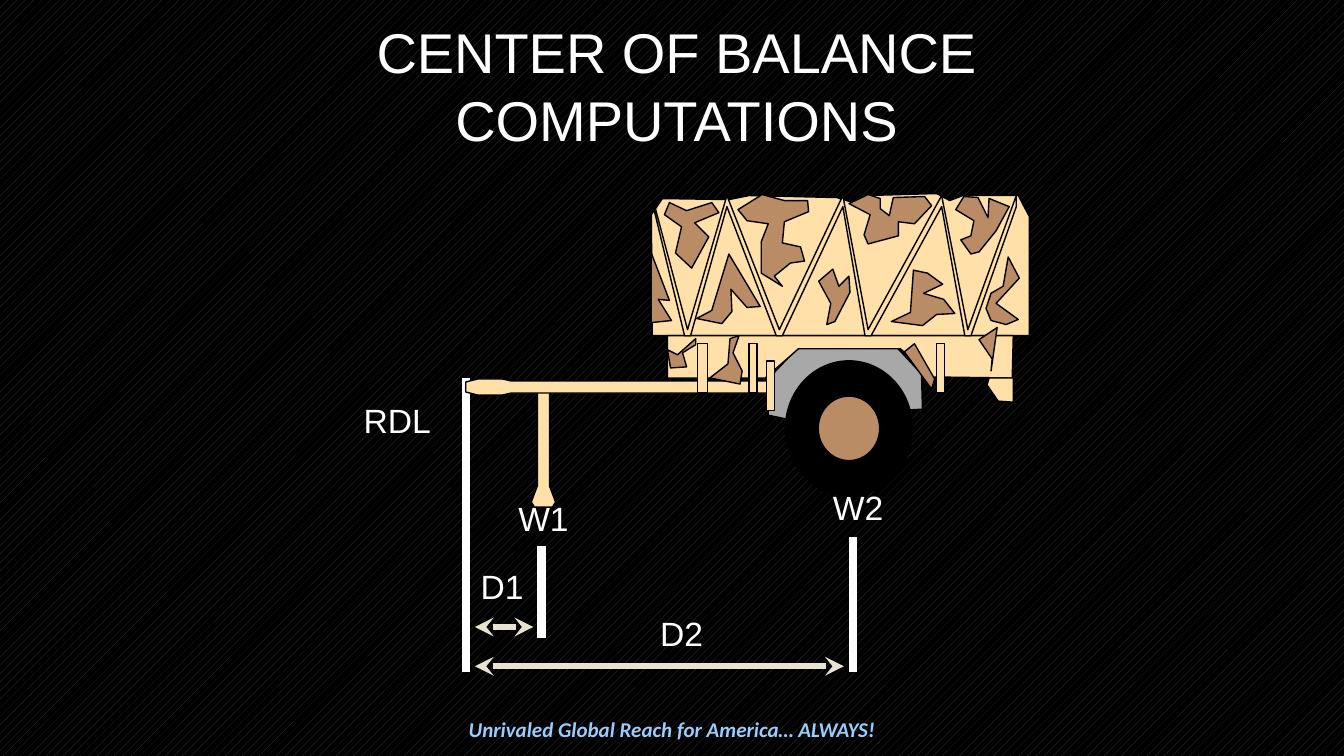
"""Build the slide on center of balance computations for a trailer."""
from lxml.etree import SubElement
from pptx import Presentation
from pptx.dml.color import RGBColor
from pptx.enum.dml import MSO_PATTERN
from pptx.enum.shapes import MSO_CONNECTOR, MSO_SHAPE
from pptx.enum.text import MSO_ANCHOR, PP_ALIGN
from pptx.oxml.ns import qn
from pptx.util import Inches, Pt

COLORS = {"white": "FFFFFF", "black": "000000", "hatch": "404040", "arrow": "E8E3CE",
          "sand": "FFE0A8", "brown": "BA8C66", "gray": "A8A8A8", "motto": "99CCFF"}

TITLE = "CENTER OF BALANCE COMPUTATIONS"
MOTTO = "Unrivaled Global Reach for America… ALWAYS!"

MARKS = [(4.62, 3.75, 6.67), (5.37, 5.42, 6.33), (8.46, 5.33, 6.67)]
SPANS = [(4.71, 8.37, 6.61), (4.71, 5.29, 6.22)]
LABELS = [("RDL", 3.94, 3.92), ("D2", 6.76, 6.03), ("D1", 4.98, 5.56),
          ("W1", 5.39, 4.89), ("W2", 8.51, 4.78)]

FENDER = [(7.62, 4.12), (7.62, 3.76), (7.94, 3.42), (8.87, 3.42), (9.14, 3.71),
          (9.15, 4.06), (8.96, 4.07), (8.5, 3.7), (7.91, 4.18)]
COVER = [(6.47, 3.33), (6.46, 2.13), (6.57, 1.97), (7.23, 1.98), (7.43, 1.94), (8.3, 1.96),
         (8.43, 2), (8.6, 1.94), (9.29, 1.92), (9.42, 1.99), (9.55, 1.94), (10.1, 1.94),
         (10.21, 2.15), (10.21, 3.33)]
BED = [(6.62, 3.75), (6.62, 3.33), (10.05, 3.33), (10.04, 3.75), (9.26, 3.74),
       (8.93, 3.46), (7.92, 3.46), (7.59, 3.75)]
FLAP = [(10.05, 3.75), (10.05, 3.99), (9.9, 3.98), (9.79, 3.82), (9.81, 3.75)]
BAR_AXIS, BAR_HALF = 3.84, [(4.62, 0.05), (4.74, 0.08), (4.98, 0.08), (5.07, 0.06), (7.62, 0.06)]
LEG_AXIS, LEG_HALF = 5.39, [(3.84, 0.06), (4.82, 0.06), (4.98, 0.12), (5.03, 0.09)]
ROPE_TOPS, ROPE_LOWS = [6.48, 7.21, 8.36, 9.34, 10.08], [6.82, 7.73, 8.61, 9.6]
HUB, WHEEL, CAP = (8.42, 4.25), (1.26, 1.34), (0.61, 0.64)
POSTS = [(6.92, 3.41, 0.1), (7.43, 3.41, 0.08), (7.6, 3.58, 0.08), (9.29, 3.41, 0.08)]

HIGH_SPOTS = [
    [(8.2, 3.22), (8.24, 3.01), (8.12, 2.79), (8.26, 2.67), (8.32, 2.84), (8.42, 2.74),
     (8.43, 2.9), (8.28, 3.19)],
    [(6.91, 3.16), (7.06, 3.08), (7.23, 2.52), (7.54, 3.04), (7.41, 3.05), (7.25, 2.87),
     (7.26, 3.09), (7.16, 3.21)],
    [(8.42, 2.02), (8.63, 2.13), (8.57, 2.33), (8.61, 2.42), (8.91, 2.34), (8.91, 2.2),
     (9.07, 2.22), (9.24, 2.04), (9.17, 1.95), (8.86, 1.96), (8.82, 2.14), (8.73, 2.07),
     (8.73, 1.97), (8.61, 1.93)],
    [(6.64, 2.01), (6.59, 2.13), (6.76, 2.25), (6.7, 2.51), (6.86, 2.66), (7.03, 2.35),
     (6.89, 2.21), (7.13, 2.11), (7.06, 2.01), (6.81, 2.09)],
    [(8.84, 3.19), (9.03, 3.1), (9.06, 2.68), (9.2, 2.71), (9.35, 2.82), (9.16, 2.91),
     (9.36, 2.97), (9.47, 3.11), (9.29, 3.12), (9.15, 3.23)],
    [(6.46, 2.51), (6.64, 2.98), (6.53, 2.97), (6.66, 3.18), (6.46, 3.2)],
    [(7.32, 2.08), (7.56, 1.93), (7.78, 1.99), (8.01, 1.99), (8.02, 2.1), (7.78, 2.2),
     (7.76, 2.41), (7.94, 2.45), (7.98, 2.59), (7.84, 2.61), (7.68, 2.74), (7.76, 2.84),
     (7.55, 2.71), (7.55, 2.4), (7.62, 2.22), (7.41, 2.19)],
    [(9.56, 1.95), (9.48, 2.08), (9.66, 2.19), (9.63, 2.34), (9.53, 2.38), (9.63, 2.52),
     (9.71, 2.5), (9.88, 2.29), (10.01, 2.05), (9.81, 1.97), (9.8, 2.16), (9.7, 1.96)],
    [(9.78, 3.06), (9.83, 2.91), (9.95, 2.84), (10, 2.55), (10.11, 2.76), (9.88, 3.01),
     (10.1, 3.17), (9.98, 3.22), (9.83, 3.18)]]
LOW_SPOTS = [
    [(6.9, 3.36), (6.72, 3.52), (6.62, 3.47), (6.65, 3.65), (6.81, 3.64), (6.77, 3.5),
     (6.9, 3.42)],
    [(7.04, 3.75), (7.22, 3.61), (7.24, 3.36), (7.33, 3.33), (7.27, 3.5), (7.36, 3.68),
     (7.34, 3.81)],
    [(9.07, 3.41), (9.27, 3.76), (9.24, 3.86), (8.97, 3.49)],
    [(9.84, 3.56), (9.71, 3.37), (9.89, 3.25), (9.83, 3.68)]]


def color(name):
    return RGBColor.from_string(COLORS[name])


def write(frame, text, size, name="Arial", tint="white", slant=False):
    frame.word_wrap = True
    frame.vertical_anchor = MSO_ANCHOR.MIDDLE
    para = frame.paragraphs[0]
    para.alignment = PP_ALIGN.CENTER
    run = para.add_run()
    run.text = text
    font = run.font
    font.size, font.name, font.color.rgb = Pt(size), name, color(tint)
    font.bold = font.italic = slant


def add_text(slide, box, *args):
    write(slide.shapes.add_textbox(*map(Inches, box)).text_frame, *args)


def add_line(slide, ends, tint, width, heads=()):
    line = slide.shapes.add_connector(MSO_CONNECTOR.STRAIGHT, *map(Inches, ends))
    line.line.color.rgb, line.line.width = color(tint), Pt(width)
    for head in heads:
        SubElement(line.line._get_or_add_ln(), qn(head), type="stealth")
    SubElement(line._element.spPr, qn("a:effectLst"))


def paint(part, tint):
    part.shadow.inherit = False
    part.fill.solid()
    part.fill.fore_color.rgb = color(tint)
    part.line.color.rgb, part.line.width = color("black"), Pt(1)


def add_form(group, tint, points):
    dots = [(Inches(x), Inches(y)) for x, y in points]
    pen = group.shapes.build_freeform(*dots[0])
    pen.add_line_segments(dots[1:], close=True)
    paint(pen.convert_to_shape(), tint)


def add_disc(group, tint, size):
    place = [mid - side / 2 for mid, side in zip(HUB, size)]
    paint(group.shapes.add_shape(MSO_SHAPE.OVAL, *map(Inches, (*place, *size))), tint)


def mirror(axis, half):
    return [(a, axis - b) for a, b in half] + [(a, axis + b) for a, b in reversed(half)]


def zigzag():
    front, back = [(ROPE_TOPS[0], 2.05)], [(ROPE_TOPS[0], 1.99)]
    for low, top in zip(ROPE_LOWS, ROPE_TOPS[1:]):
        front += [(low - 0.03, 3.33), (low + 0.03, 3.33), (top, 2.05)]
        back += [(low, 3.27), (top, 1.94)]
    return front + back[::-1]


def draw_trailer(group):
    add_form(group, "gray", FENDER)
    add_form(group, "sand", COVER)
    add_form(group, "sand", [(x, y) for y, x in mirror(LEG_AXIS, LEG_HALF)])
    add_form(group, "sand", mirror(BAR_AXIS, BAR_HALF))
    add_disc(group, "black", WHEEL)
    add_disc(group, "brown", CAP)
    for tint, form in (("sand", BED), ("sand", zigzag())):
        add_form(group, tint, form)
    for spot in HIGH_SPOTS + LOW_SPOTS:
        add_form(group, "brown", spot)
    for x, y, width in POSTS:
        post = group.shapes.add_shape(MSO_SHAPE.RECTANGLE, *map(Inches, (x, y, width, 0.49)))
        paint(post, "sand")
    add_form(group, "sand", FLAP)


def main():
    deck = Presentation()
    deck.slide_width, deck.slide_height = Inches(13.33), Inches(7.5)
    slide = deck.slides.add_slide(deck.slide_layouts[5])
    fill = slide.background.fill
    fill.patterned()
    fill.pattern = MSO_PATTERN.PERCENT_20
    fill.fore_color.rgb, fill.back_color.rgb = color("hatch"), color("black")

    title = slide.shapes.title
    title.left, title.top, title.width, title.height = map(Inches, (1.75, 0.12, 9.92, 1.45))
    write(title.text_frame, TITLE, 40)
    add_text(slide, (0, 7.06, 13.33, 0.35), MOTTO, 15, "Calibri", "motto", True)

    for x, top, end in MARKS:
        add_line(slide, (x, top, x, end), "white", 6)
    for left, right, y in SPANS:
        add_line(slide, (left, y, right, y), "arrow", 4.5, ("a:headEnd", "a:tailEnd"))
    for text, mid, y in LABELS:
        add_text(slide, (mid - 0.49, y, 0.98, 0.5), text, 24)

    draw_trailer(slide.shapes.add_group_shape())
    deck.save("out.pptx")


if __name__ == "__main__":
    main()
